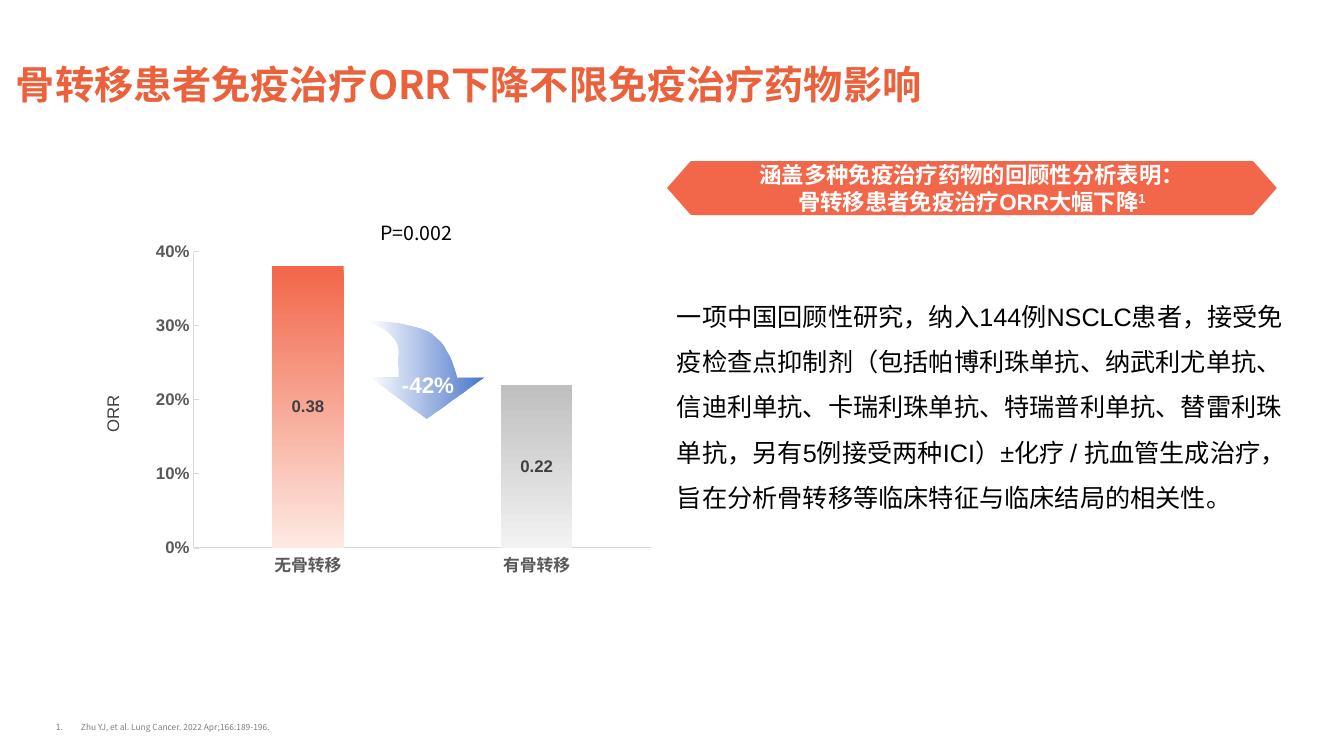
from lxml import etree
from pptx import Presentation
from pptx import util as u
from pptx.chart.data import CategoryChartData
from pptx.dml.color import RGBColor
from pptx.enum import chart as ch, text
from pptx.oxml import parse_xml
from pptx.oxml.ns import nsdecls, qn

PX = 9525 * 96 / 100.8  # EMU in one px
CJK = "Noto Sans CJK SC"
ORANGE, WHITE, BLACK, BLUE = "F26649", "FFFFFF", "000000", "4874CB"
CENTER = text.PP_ALIGN.CENTER
MIDDLE = text.MSO_ANCHOR.MIDDLE


def px(*lengths):
    return [u.Emu(round(length * PX)) for length in lengths]


def rgb(value):
    return RGBColor.from_string(value)


def set_font(font, color, **values):
    for name, value in values.items():
        setattr(font, name, value)
    font.color.rgb = rgb(color)


def add_text(paragraph, words, size, color, name="Arial", bold=False):
    run = paragraph.add_run()
    run.text = words
    set_font(run.font, color, size=u.Pt(size), name=name, bold=bold)
    properties = run._r.get_or_add_rPr()
    properties.find(qn("a:latin")).addnext(
        parse_xml(f'<a:ea {nsdecls("a")} typeface="{CJK}"/>'))
    return run


def set_frame(frame, **values):
    for name, value in ({"word_wrap": True} | values).items():
        setattr(frame, name, value)
    return frame


def text_box(slide, box, words, size, color, align=None, name="Arial", bold=False, **frame):
    shape = slide.shapes.add_textbox(*px(*box))
    paragraph = set_frame(shape.text_frame, **frame).paragraphs[0]
    paragraph.alignment = align
    add_text(paragraph, words, size, color, name, bold)
    return shape


def set_gradient(fill, colors, angle):
    fill.gradient()
    fill.gradient_angle = angle
    for stop, color in zip(fill.gradient_stops, colors):
        stop.color.rgb = rgb(color)


def add_outline(slide, left, top, start, steps):
    """Closed outline; a step of two numbers is a line, of six a cubic curve."""
    points = [start]
    for step in steps:
        if len(step) == 2:
            points.append(step)
            continue
        controls = [points[-1], step[:2], step[2:4], step[4:]]
        for part in range(1, 13):
            t = part / 12
            weights = ((1 - t) ** 3, 3 * t * (1 - t) ** 2, 3 * t * t * (1 - t), t ** 3)
            points.append(tuple(sum(w * c[axis] for w, c in zip(weights, controls))
                                for axis in (0, 1)))
    points = [px(*point) for point in points]
    builder = slide.shapes.build_freeform(*points[0])
    builder.add_line_segments(points[1:], close=True)
    shape = builder.convert_to_shape(*px(left, top))
    shape.shadow.inherit = False
    shape.line.fill.background()
    return shape


def add_banner(slide, box):
    left, top, width, height = box
    cut, middle = 24, height // 2
    right = width - cut
    shape = add_outline(slide, left, top, (cut + 3, 0), [
        (right - 3, 0), (right - 1, 0, right, 0, right + 1, 1),
        (width - 1, middle - 1), (width, middle, width, middle, width - 1, middle + 1),
        (right + 1, height - 1), (right, height, right - 1, height, right - 3, height),
        (cut + 3, height), (cut + 1, height, cut, height, cut - 1, height - 1),
        (1, middle + 1), (0, middle, 0, middle, 1, middle - 1),
        (cut - 1, 1), (cut, 0, cut + 1, 0, cut + 3, 0)])
    shape.fill.solid()
    shape.fill.fore_color.rgb = rgb(ORANGE)
    frame = set_frame(shape.text_frame, vertical_anchor=MIDDLE, margin_top=0, margin_bottom=0)
    lines = ("涵盖多种免疫治疗药物的回顾性分析表明：", "骨转移患者免疫治疗ORR大幅下降")
    for index, line in enumerate(lines):
        paragraph = frame.add_paragraph() if index else frame.paragraphs[0]
        paragraph.alignment = CENTER
        add_text(paragraph, line, 16, WHITE, bold=True)
    reference = add_text(paragraph, "1", 16, WHITE, bold=True)
    reference._r.get_or_add_rPr().set("baseline", "30000")


def add_response_chart(slide, box):
    data = CategoryChartData(number_format="0.00")
    data.categories = ["无骨转移", "有骨转移"]
    data.add_series("ORR", (0.38, 0.22))
    chart = slide.shapes.add_chart(ch.XL_CHART_TYPE.COLUMN_CLUSTERED, *px(*box), data).chart
    chart.has_legend = chart.has_title = False
    set_font(chart.font, BLACK, size=u.Pt(12), name="Arial", bold=True)

    # Axes
    value_axis, category_axis = chart.value_axis, chart.category_axis
    formats = {
        value_axis: dict(minimum_scale=0, maximum_scale=0.4, major_unit=0.1,
                         has_major_gridlines=False, major_tick_mark=ch.XL_TICK_MARK.INSIDE),
        category_axis: dict(has_major_gridlines=False, major_tick_mark=ch.XL_TICK_MARK.NONE)}
    for axis, values in formats.items():
        for name, value in values.items():
            setattr(axis, name, value)
        set_font(axis.tick_labels.font, "595959", size=u.Pt(12), name="Arial", bold=True)
        axis.format.line.color.rgb = rgb("D9D9D9")
        axis.format.line.width = u.Pt(0.5 if axis is value_axis else 0.75)
    value_axis.tick_labels.number_format = "0%"
    value_axis.tick_labels.number_format_is_linked = False

    # Columns and their values
    plot = chart.plots[0]
    for name, value in dict(gap_width=219, overlap=-27, vary_by_categories=False,
                            has_data_labels=True).items():
        setattr(plot, name, value)
    for name, value in dict(show_value=True, number_format="0.00", number_format_is_linked=False,
                            position=ch.XL_LABEL_POSITION.CENTER).items():
        setattr(plot.data_labels, name, value)
    set_font(plot.data_labels.font, "404040", size=u.Pt(12), name="Arial", bold=True)
    for index, colors in enumerate([(ORANGE, "FDEAE3"), ("BFBFBF", "F2F2F2")]):
        set_gradient(plot.series[0].points[index].format.fill, colors, 270)

    # Inner plot area
    area = chart._chartSpace.chart.plotArea
    for old in area.findall(qn("c:layout")):
        area.remove(old)
    layout = etree.Element(qn("c:layout"))
    manual = etree.SubElement(layout, qn("c:manualLayout"))
    for tag, value in dict(layoutTarget="inner", xMode="edge", yMode="edge",
                           x=0.11, y=0.03, w=0.86, h=0.83).items():
        etree.SubElement(manual, qn(f"c:{tag}")).set("val", str(value))
    area.insert(0, layout)


def add_drop_arrow(slide, left, top):
    shape = add_outline(slide, left, top, (57, 98), [
        (115, 56), (87, 56), (87, 56, 81, 27, 63, 14), (45, 1, 0, 0, 0, 0), (1, 3),
        (1, 3, 29, 11, 29, 31), (28, 42, 29, 50, 29, 56), (0, 56)])
    set_gradient(shape.fill, (BLUE, BLUE), 0)
    clear = next(shape._element.iter(qn("a:srgbClr")))
    etree.SubElement(clear, qn("a:alpha")).set("val", "0")


def add_chart_panel(slide, box):
    left, top, width, height = box
    axis_title = text_box(slide, (left, top + 181, 111, 35), "ORR", 12, "404040", CENTER,
                          vertical_anchor=MIDDLE)
    axis_title.rotation = 270
    add_response_chart(slide, (left + 78, top + 26, width - 78, height - 26))
    add_drop_arrow(slide, left + 370 - 57, top + 106)
    text_box(slide, (left + 307, top + 145, 128, 49), "-42%", 16, WHITE, CENTER, bold=True,
             vertical_anchor=MIDDLE)
    text_box(slide, (left + 256, top + 1, 207, 34), "P=0.002", 14, BLACK, CENTER, CJK)


def add_study_text(slide, box):
    shape = text_box(
        slide, box,
        "一项中国回顾性研究，纳入144例NSCLC患者，接受免疫检查点抑制剂（包括帕博利珠单抗、"
        "纳武利尤单抗、信迪利单抗、卡瑞利珠单抗、特瑞普利单抗、替雷利珠单抗，另有5例接受两种ICI）"
        "±化疗 / 抗血管生成治疗，旨在分析骨转移等临床特征与临床结局的相关性。", 18, BLACK)
    shape.text_frame.paragraphs[0].line_spacing = 1.5


def add_reference(slide, box):
    shape = text_box(slide, box, "Zhu YJ, et al. Lung Cancer. 2022 Apr;166:189-196.", 6,
                     "808080", name=CJK, margin_left=0)
    properties = shape.text_frame.paragraphs[0]._p.get_or_add_pPr()
    indent = px(25)[0]
    properties.set("marL", str(indent))
    properties.set("indent", str(-indent))
    etree.SubElement(properties, qn("a:buAutoNum")).set("type", "arabicPeriod")


def main():
    presentation = Presentation()
    presentation.slide_width, presentation.slide_height = px(1344, 756)
    slide = presentation.slides.add_slide(presentation.slide_layouts[6])
    text_box(slide, (6, 45, 1210, 78), "骨转移患者免疫治疗ORR下降不限免疫治疗药物影响", 28,
             "EB613B", name=CJK, bold=True, vertical_anchor=MIDDLE)
    add_banner(slide, (667, 161, 610, 54))
    add_study_text(slide, (667, 281, 632, 285))
    add_reference(slide, (56, 717, 283, 30))
    add_chart_panel(slide, (57, 215, 610, 383))
    presentation.save("out.pptx")


if __name__ == "__main__":
    main()
